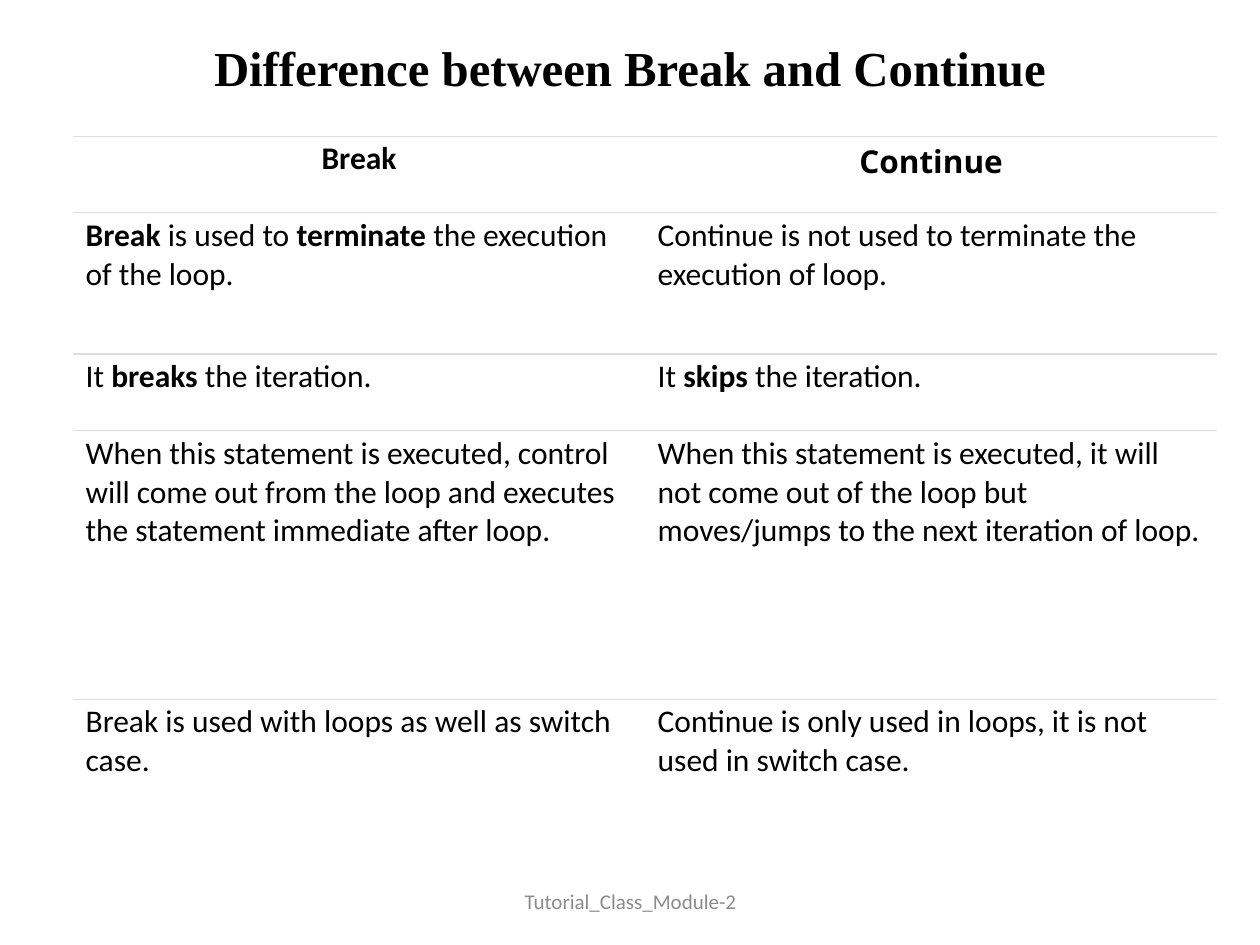
import pptx
import pptx.util
import pptx.dml.color
import pptx.enum.text
import pptx.oxml.ns
from lxml import etree

Inches, Pt = pptx.util.Inches, pptx.util.Pt
RGBColor = pptx.dml.color.RGBColor
ALIGN, ANCHOR = pptx.enum.text.PP_ALIGN, pptx.enum.text.MSO_ANCHOR
qn = pptx.oxml.ns.qn

BLACK = RGBColor(0x00, 0x00, 0x00)
WHITE = RGBColor(0xFF, 0xFF, 0xFF)
GREY = RGBColor(0x8C, 0x8C, 0x8C)
RULE = RGBColor(0xDD, 0xDD, 0xDD)

TITLE = "Difference between Break and Continue"
FOOTER = "Tutorial_Class_Module-2"
ROWS = [
    (0.61, "*Break*", "*Continue*"),
    (1.12, "*Break* is used to *terminate* the execution of the loop.",
     "Continue is not used to terminate the execution of loop."),
    (0.61, "It *breaks* the iteration.", "It *skips* the iteration."),
    (2.13, "When this statement is executed, control will come out from the loop "
     "and executes the statement immediate after loop.",
     "When this statement is executed, it will not come out of the loop but "
     "moves/jumps to the next iteration of loop."),
    (1.12, "Break is used with loops as well as switch case.",
     "Continue is only used in loops, it is not used in switch case."),
]
WIDTH = 4.54

HEAD = {"name": "Times New Roman", "size": Pt(27.9), "bold": True}
BODY = {"name": "Calibri", "size": Pt(18)}
OPEN = {"name": "Open Sans", "size": Pt(18)}
FOOT = {"name": "Calibri", "size": Pt(12)}
PAD = {"margin_left": Inches(0.1), "margin_right": Inches(0.1),
       "margin_top": Inches(0.03), "margin_bottom": Inches(0.03)}


def apply(item, form):
    for key, value in form.items():
        setattr(item, key, value)


def write(frame, text, form, align, color=BLACK):
    para = frame.paragraphs[0]
    para.alignment = align
    for i, part in enumerate(text.split("*")):
        if part:
            run = para.add_run()
            run.text = part
            apply(run.font, {"bold": i % 2 == 1, **form})
            run.font.color.rgb = color


def label(slide, box, text, form, color):
    frame = slide.shapes.add_textbox(*map(Inches, box)).text_frame
    apply(frame, {"word_wrap": True, "vertical_anchor": ANCHOR.MIDDLE})
    write(frame, text, form, ALIGN.CENTER, color)


def border(cell, sides):
    props = cell._tc.get_or_add_tcPr()
    for side in "LRTB":
        line = etree.SubElement(props, qn("a:ln" + side), w=str(Pt(0.75)))
        if side in sides:
            fill = etree.SubElement(line, qn("a:solidFill"))
            etree.SubElement(fill, qn("a:srgbClr"), val=str(RULE))
        else:
            etree.SubElement(line, qn("a:noFill"))


def grid(slide):
    high = sum(row[0] for row in ROWS)
    table = slide.shapes.add_table(
        len(ROWS), 2, Inches(0.58), Inches(1.08),
        Inches(2 * WIDTH), Inches(high)).table
    apply(table, {"first_row": False, "horz_banding": False})
    for col in table.columns:
        col.width = Inches(WIDTH)
    for r, (tall, *texts) in enumerate(ROWS):
        table.rows[r].height = Inches(tall)
        for c, text in enumerate(texts):
            cell = table.cell(r, c)
            apply(cell, PAD)
            border(cell, "T" if r == len(ROWS) - 1 else "TB")
            cell.fill.solid()
            cell.fill.fore_color.rgb = WHITE
            form = OPEN if (r, c) == (0, 1) else BODY
            align = ALIGN.LEFT if r else ALIGN.CENTER
            write(cell.text_frame, text, form, align)


def main():
    deck = pptx.Presentation()
    apply(deck, {"slide_width": Inches(10), "slide_height": Inches(7.5)})
    slide = deck.slides.add_slide(deck.slide_layouts[6])
    label(slide, (0.5, 0.22, 9, 0.62), TITLE, HEAD, BLACK)
    grid(slide)
    label(slide, (3.42, 6.95, 3.17, 0.4), FOOTER, FOOT, GREY)
    deck.save("out.pptx")


if __name__ == "__main__":
    main()
